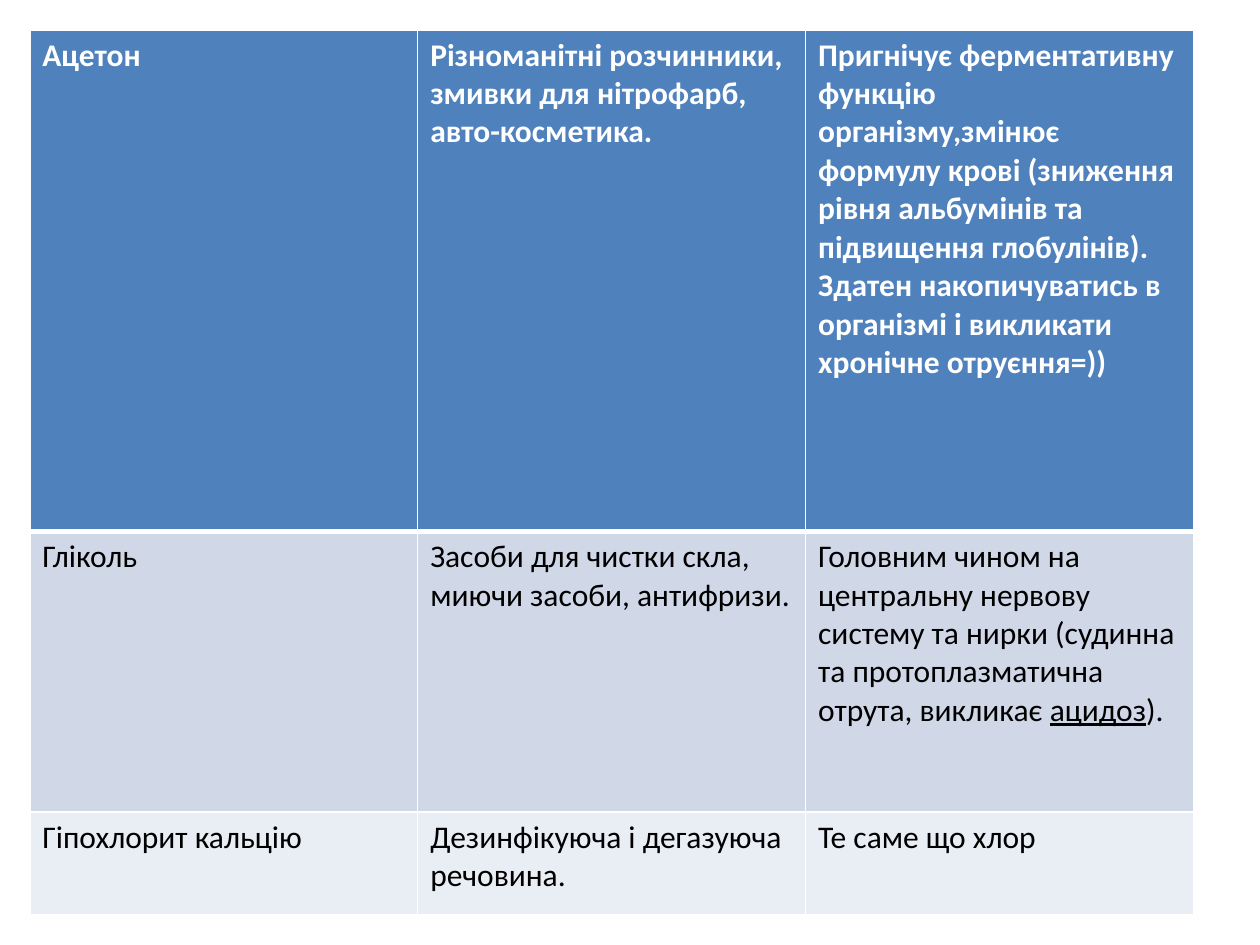
"""Build a slide with a table of household toxins, their sources and effects."""
from dataclasses import dataclass

from lxml import etree
from pptx import Presentation
from pptx.dml.color import RGBColor
from pptx.enum.text import MSO_ANCHOR
from pptx.oxml.ns import qn
from pptx.table import _Cell
from pptx.util import Cm, Pt

TOP = MSO_ANCHOR.TOP
HUES = {"head": "4F81BD", "band": "D0D8E8", "pale": "E9EDF4",
        "white": "FFFFFF", "black": "000000"}
FONT = {"name": "Calibri", "size": Pt(18)}
EDGE = Cm(0.6)
WIDE = Cm(7.82)
MARK = "_"


@dataclass
class Row:
    """A table row; text between marks is underlined."""
    high: float
    fill: str
    texts: tuple[str, ...]
    ink: str = "black"
    bold: bool = False
    above: int = 1
    below: int = 1


ROWS = [
    Row(10.11, "head", (
        "Ацетон",
        "Різноманітні розчинники, змивки для нітрофарб, авто-косметика.",
        "Пригнічує ферментативну функцію організму,змінює формулу крові "
        "(зниження рівня альбумінів та підвищення глобулінів). Здатен "
        "накопичуватись в організмі і викликати хронічне отруєння=))",
    ), ink="white", bold=True, below=3),
    Row(5.66, "band", (
        "Гліколь",
        "Засоби для чистки скла, миючи засоби, антифризи.",
        "Головним чином на центральну нервову систему та нирки (судинна та "
        "протоплазматична отрута, викликає _ацидоз_).",
    ), above=3),
    Row(2.08, "pale", (
        "Гіпохлорит кальцію",
        "Дезинфікуюча і дегазуюча речовина.",
        "Те саме що хлор",
    )),
]


def set_all(item: object, values: dict) -> None:
    """Set each named attribute on the item."""
    for name, value in values.items():
        setattr(item, name, value)


def add_lines(cell: _Cell, row: Row) -> None:
    """Give the cell its white borders."""
    props = cell._tc.get_or_add_tcPr()
    sides = {"lnL": 1, "lnR": 1, "lnT": row.above, "lnB": row.below}
    for side, width in sides.items():
        line = etree.SubElement(props, qn(f"a:{side}"), w=str(Pt(width)))
        fill = etree.SubElement(line, qn("a:solidFill"))
        etree.SubElement(fill, qn("a:srgbClr"), val=HUES["white"])


def fill_cell(cell: _Cell, row: Row, text: str) -> None:
    """Draw the borders, fill and text of a cell."""
    add_lines(cell, row)
    cell.fill.solid()
    cell.fill.fore_color.rgb = RGBColor.from_string(HUES[row.fill])
    cell.vertical_anchor = TOP
    for spot, part in enumerate(text.split(MARK)):
        run = cell.text_frame.paragraphs[0].add_run()
        run.text = part
        set_all(run.font, FONT | {"bold": row.bold, "underline": spot % 2 == 1})
        run.font.color.rgb = RGBColor.from_string(HUES[row.ink])


def main() -> None:
    """Build and save the slide."""
    deck = Presentation()
    set_all(deck, {"slide_width": Cm(25.4), "slide_height": Cm(19.05)})
    slide = deck.slides.add_slide(deck.slide_layouts[6])
    count = len(ROWS[0].texts)
    high = sum(Cm(row.high) for row in ROWS)
    table = slide.shapes.add_table(
        len(ROWS), count, EDGE, EDGE, WIDE * count, high).table
    set_all(table, {"first_row": False, "horz_banding": False})
    for col in table.columns:
        col.width = WIDE
    for line, row in zip(table.rows, ROWS):
        line.height = Cm(row.high)
        for cell, text in zip(line.cells, row.texts):
            fill_cell(cell, row, text)
    deck.save("out.pptx")


if __name__ == "__main__":
    main()
